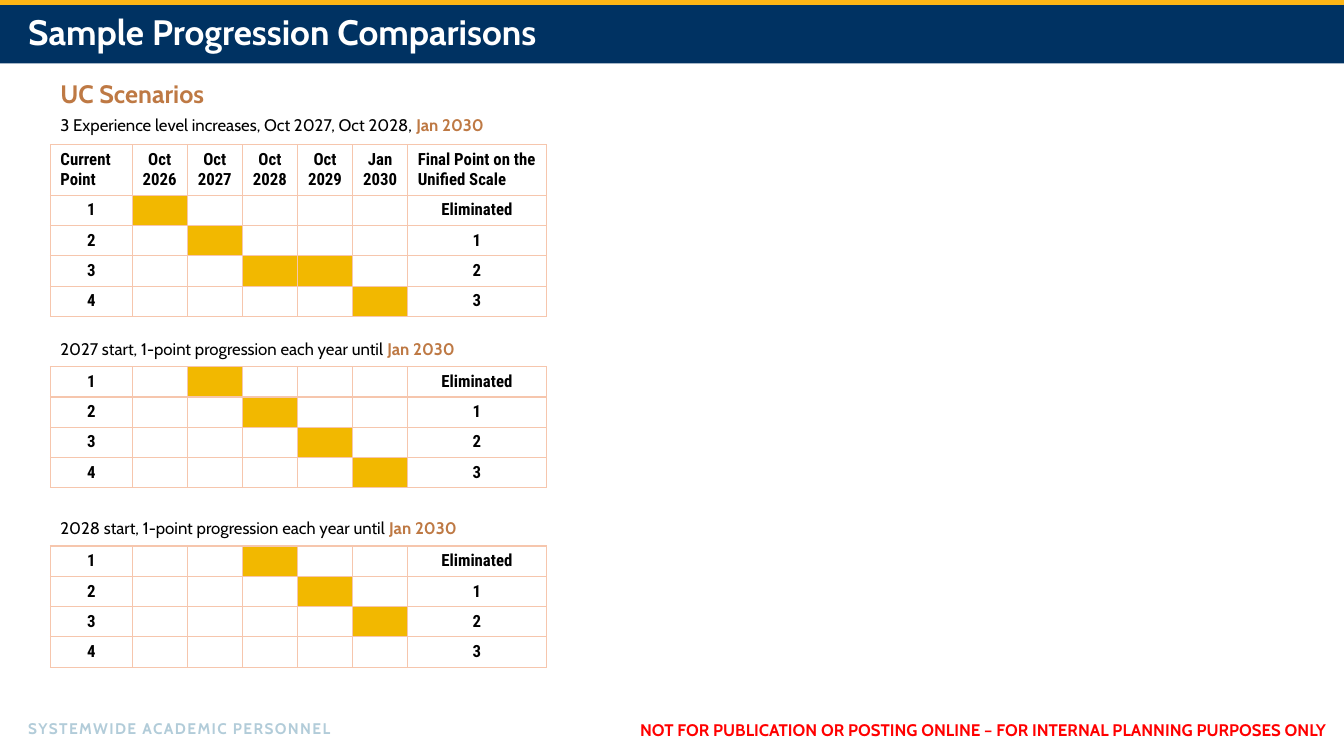
from dataclasses import dataclass

from lxml.etree import SubElement
from pptx import Presentation
from pptx.dml.color import RGBColor
from pptx.enum.shapes import MSO_SHAPE
from pptx.enum.text import MSO_ANCHOR, MSO_AUTO_SIZE, PP_ALIGN
from pptx.oxml.ns import qn
from pptx.util import Cm, Pt


@dataclass(frozen=True)
class Theme:
    """Colours, fonts and type sizes of the slide."""
    gold: str = "FDB515"
    navy: str = "003262"
    white: str = "FFFFFF"
    black: str = "000000"
    bronze: str = "BE7944"
    footer: str = "B2CCD9"
    warning: str = "FF0000"
    marker: str = "F2B800"
    grid: str = "F6C6AD"
    text_font: str = "Cabin"
    table_font: str = "Roboto Condensed"
    title_size: float = 25.2
    heading_size: float = 18
    body_size: float = 12
    footer_size: float = 11


THEME = Theme()
LEFT = 1.27
COLUMNS = [2.06] + [1.39] * 5 + [3.49]
HEADER_HEIGHT = 1.27
HEADER = ["Current Point", "Oct 2026", "Oct 2027", "Oct 2028", "Oct 2029",
          "Jan 2030", "Final Point on the Unified Scale"]
FINAL_POINTS = ["Eliminated", "1", "2", "3"]
UNTIL = "1-point progression each year until "
SCENARIOS = [
    (2.77, 11.23, "3 Experience level increases, Oct 2027, Oct 2028, ",
     3.65, 0.75, [HEADER], [{1}, {2}, {3, 4}, {5}]),
    (8.41, 10.69, "2027 start, " + UNTIL, 9.24, 0.75, [], [{2}, {3}, {4}, {5}]),
    (12.93, 10.69, "2028 start, " + UNTIL, 13.76, 0.76, [], [{3}, {4}, {5}, set()]),
]


def add_run(paragraph, text, size, color, bold=True, font=THEME.text_font):
    """Append a formatted run to a paragraph."""
    run = paragraph.add_run()
    run.text = text
    run.font.size = Pt(size)
    run.font.bold = bold
    run.font.name = font
    run.font.color.rgb = RGBColor.from_string(color)
    return run


def add_band(slide, top, height, color):
    """Draw a full-width colour band."""
    band = slide.shapes.add_shape(MSO_SHAPE.RECTANGLE, 0, Cm(top), Cm(33.87), Cm(height))
    band.shadow.inherit = False
    band.fill.solid()
    band.fill.fore_color.rgb = RGBColor.from_string(color)
    band.line.fill.background()


def add_label(slide, left, top, width, height):
    """Add a one-line text box and return its paragraph."""
    frame = slide.shapes.add_textbox(Cm(left), Cm(top), Cm(width), Cm(height)).text_frame
    frame.word_wrap = False
    frame.auto_size = MSO_AUTO_SIZE.SHAPE_TO_FIT_TEXT
    return frame.paragraphs[0]


def add_title(slide, text):
    """Add the slide title, centred vertically in its band."""
    frame = slide.shapes.add_textbox(Cm(0.46), Cm(0.33), Cm(29.21), Cm(1.07)).text_frame
    frame.word_wrap = True
    frame.vertical_anchor = MSO_ANCHOR.MIDDLE
    frame.paragraphs[0].line_spacing = 0.9
    add_run(frame.paragraphs[0], text, THEME.title_size, THEME.white)


def add_borders(cell):
    """Outline all four sides of a cell."""
    properties = cell._tc.get_or_add_tcPr()
    for side in ("lnL", "lnR", "lnT", "lnB"):
        line = SubElement(properties, qn(f"a:{side}"), w=str(Pt(1)))
        SubElement(SubElement(line, qn("a:solidFill")), qn("a:srgbClr"), val=THEME.grid)


def fill_cell(cell, text, marked, centered):
    """Write, outline and colour one cell."""
    add_borders(cell)
    if marked:
        cell.fill.solid()
        cell.fill.fore_color.rgb = RGBColor.from_string(THEME.marker)
    else:
        cell.fill.background()
    paragraph = cell.text_frame.paragraphs[0]
    if centered:
        paragraph.alignment = PP_ALIGN.CENTER
    if text:
        add_run(paragraph, text, THEME.body_size, THEME.black, font=THEME.table_font)
    else:
        end = SubElement(paragraph._p, qn("a:endParaRPr"), sz=str(THEME.body_size * 100))
        SubElement(end, qn("a:latin"), typeface=THEME.table_font)


def add_progression(slide, top, row_height, header, steps):
    """Add a progression table whose marked columns are given per row."""
    points = [[str(number), *[""] * 5, final]
              for number, final in enumerate(FINAL_POINTS, 1)]
    rows = header + points
    marks = [set() for _ in header] + steps
    heights = [HEADER_HEIGHT] * len(header) + [row_height] * len(points)
    table = slide.shapes.add_table(len(rows), len(COLUMNS), Cm(LEFT), Cm(top),
                                   Cm(sum(COLUMNS)), Cm(sum(heights))).table
    table.first_row = table.horz_banding = False
    for column, width in zip(table.columns, COLUMNS):
        column.width = Cm(width)
    for row, height, texts, marked in zip(table.rows, heights, rows, marks):
        row.height = Cm(height)
        for index, (cell, text) in enumerate(zip(row.cells, texts)):
            centered = texts is not HEADER or 0 < index < len(COLUMNS) - 1
            fill_cell(cell, text, index in marked, centered)


def add_scenario(slide, caption_top, caption_width, caption, *progression):
    """Add a caption and the progression table below it."""
    paragraph = add_label(slide, LEFT, caption_top, caption_width, 0.76)
    add_run(paragraph, caption, THEME.body_size, THEME.black, bold=False)
    add_run(paragraph, "Jan 2030", THEME.body_size, THEME.bronze)
    add_progression(slide, *progression)


def add_footer(slide):
    """Add the department name and the publication warning."""
    department = add_run(add_label(slide, 0.46, 17.99, 8.23, 0.74),
                         "SYSTEMWIDE ACADEMIC PERSONNEL", THEME.footer_size, THEME.footer)
    department.font._element.set("spc", "95")
    add_run(add_label(slide, 15.88, 18.01, 17.98, 0.76),
            "NOT FOR PUBLICATION OR POSTING ONLINE – FOR INTERNAL PLANNING PURPOSES ONLY",
            THEME.body_size, THEME.warning)


def main():
    """Build and save the slide."""
    deck = Presentation()
    deck.slide_width, deck.slide_height = Cm(33.87), Cm(19.05)
    slide = deck.slides.add_slide(deck.slide_layouts[6])
    add_band(slide, 0, 0.13, THEME.gold)
    add_band(slide, 0.13, 1.47, THEME.navy)
    add_footer(slide)
    add_title(slide, "Sample Progression Comparisons")
    add_run(add_label(slide, LEFT, 1.85, 4.47, 1.02), "UC Scenarios",
            THEME.heading_size, THEME.bronze)
    for scenario in SCENARIOS:
        add_scenario(slide, *scenario)
    deck.save("out.pptx")


if __name__ == "__main__":
    main()
